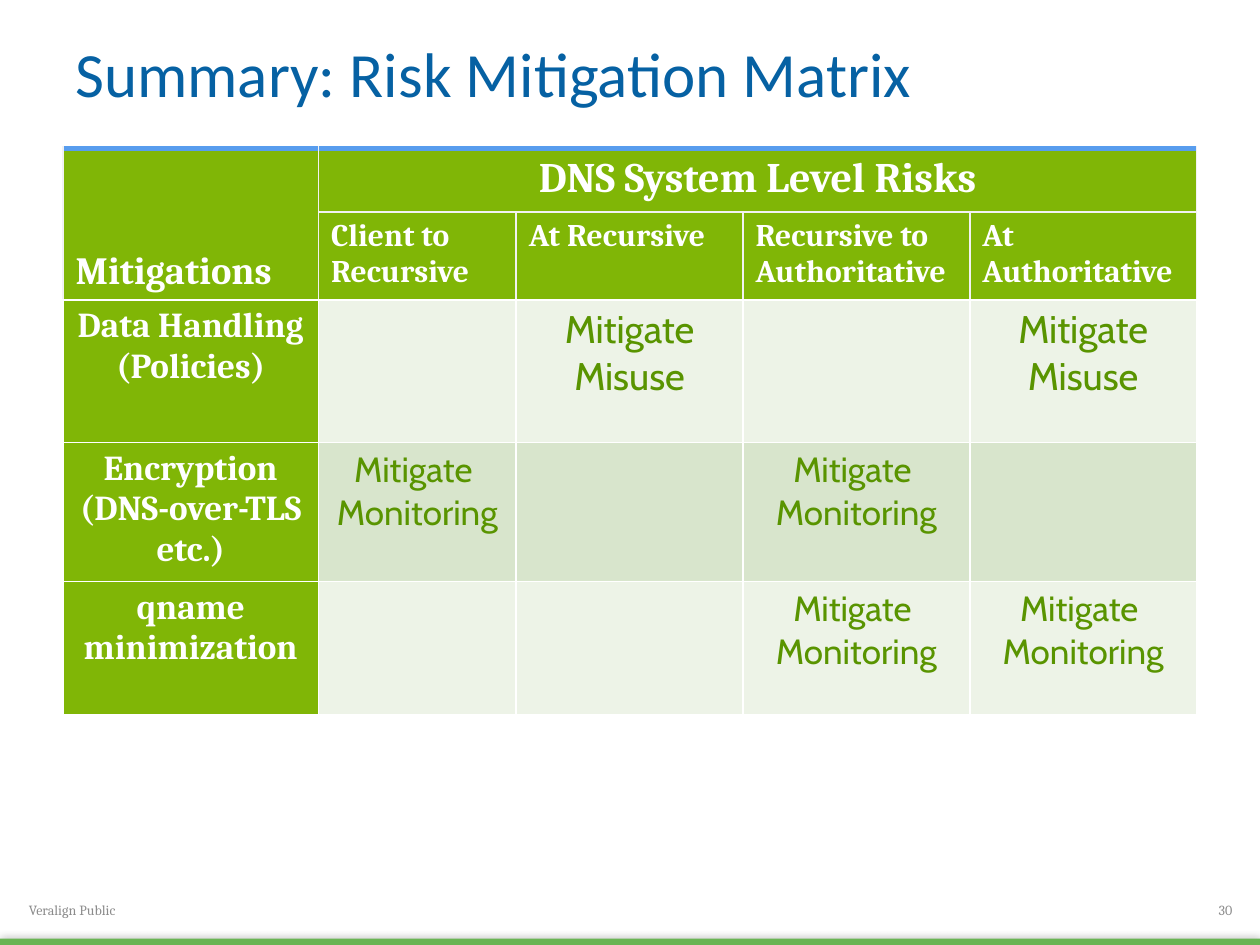
from lxml.etree import SubElement
from pptx import Presentation
from pptx.dml.color import RGBColor
from pptx.enum.shapes import MSO_SHAPE
from pptx.enum.text import MSO_ANCHOR as ANCHOR, PP_ALIGN as ALIGN
from pptx.oxml.ns import qn
from pptx.util import Pt

GREEN, WHITE, PALE_GREY, BLUE = "80B606", "FFFFFF", "F2F2F2", "589DEE"
MITIGATION_TEXT, GREY = "599400", "8C8C8C"
BAND_FILLS = ("EDF3E7", "D8E5CC")

COLUMN_WIDTHS = (146, 113, 129.6, 129.6, 129.6)
ROW_HEIGHTS = (35, 49, 81.5, 76.5, 76.5)
RISKS = ("Client to Recursive", "At Recursive",
         "Recursive to Authoritative", "At Authoritative")
MISUSE = ("Mitigate Misuse",)
MONITORING = ("Mitigate ", "Monitoring")
MITIGATIONS = (
    ("Data Handling (Policies)", 22, (None, MISUSE, None, MISUSE)),
    ("Encryption (DNS-over-TLS etc.)", 20, (MONITORING, None, MONITORING, None)),
    ("qname minimization", 20, (None, None, MONITORING, MONITORING)),
)


def rgb(color):
    return RGBColor.from_string(color)


def write(frame, lines, size, font, color, bold=False, align=ALIGN.LEFT):
    """Write each line as its own paragraph."""
    for index, line in enumerate(lines):
        paragraph = frame.add_paragraph() if index else frame.paragraphs[0]
        paragraph.alignment = align
        run = paragraph.add_run()
        run.text = line
        run.font.size = Pt(size)
        run.font.name = font
        run.font.bold = bold
        run.font.color.rgb = rgb(color)


def add_label(slide, box, text, size, font, color, align=ALIGN.LEFT):
    frame = slide.shapes.add_textbox(*map(Pt, box)).text_frame
    frame.word_wrap = True
    frame.margin_top = frame.margin_bottom = 0
    frame.vertical_anchor = ANCHOR.MIDDLE
    write(frame, [text], size, font, color, align=align)


def style_cell(cell, fill, border, top=None):
    """Give a cell its fill and borders; top marks the table's upper edge."""
    properties = cell._tc.get_or_add_tcPr()
    for side in "LRTB":
        heavy = side == "T" and top
        line = SubElement(properties, qn(f"a:ln{side}"), w=str(Pt(3 if heavy else 1)))
        line_fill = SubElement(line, qn("a:solidFill"))
        SubElement(line_fill, qn("a:srgbClr"), val=top if heavy else border)
    cell.fill.solid()
    cell.fill.fore_color.rgb = rgb(fill)


def write_header(cell, text, size, align=ALIGN.LEFT):
    write(cell.text_frame, [text], size, "Cambria", WHITE, True, align)


def add_risk_matrix(slide, left, top):
    table = slide.shapes.add_table(
        len(ROW_HEIGHTS), len(COLUMN_WIDTHS), Pt(left), Pt(top),
        Pt(sum(COLUMN_WIDTHS)), Pt(sum(ROW_HEIGHTS))).table
    table.first_row = table.horz_banding = False
    for column, width in zip(table.columns, COLUMN_WIDTHS):
        column.width = Pt(width)
    for row, height in zip(table.rows, ROW_HEIGHTS):
        row.height = Pt(height)

    for row_index, row in enumerate(table.rows):
        for column_index, cell in enumerate(row.cells):
            is_header = row_index < 2 or column_index == 0
            fill = GREEN if is_header else BAND_FILLS[row_index % 2]
            style_cell(cell, fill, PALE_GREY if row_index < 2 else WHITE,
                       top=None if row_index else BLUE)

    corner, heading = table.cell(0, 0), table.cell(0, 1)
    corner.merge(table.cell(1, 0))
    corner.vertical_anchor = ANCHOR.BOTTOM
    write_header(corner, "Mitigations", 22)
    heading.merge(table.cell(0, 4))
    write_header(heading, "DNS System Level Risks", 24, ALIGN.CENTER)
    for column_index, risk in enumerate(RISKS, 1):
        write_header(table.cell(1, column_index), risk, 18)

    for row_index, (name, size, effects) in enumerate(MITIGATIONS, 2):
        write_header(table.cell(row_index, 0), name, 20, ALIGN.CENTER)
        for column_index, lines in enumerate(effects, 1):
            if lines:
                write(table.cell(row_index, column_index).text_frame, lines, size,
                      "Cabin", MITIGATION_TEXT, align=ALIGN.CENTER)


def add_footer_bar(slide, box):
    bar = slide.shapes.add_shape(MSO_SHAPE.RECTANGLE, *map(Pt, box))
    bar.fill.solid()
    bar.fill.fore_color.rgb = rgb("69B453")
    bar.line.fill.background()
    bar.shadow.inherit = False
    effects = bar._element.spPr.find(qn("a:effectLst"))
    shadow = SubElement(effects, qn("a:outerShdw"), blurRad=str(Pt(5)), dist="0")
    shadow_color = SubElement(shadow, qn("a:srgbClr"), val="000000")
    SubElement(shadow_color, qn("a:alpha"), val="40000")


def add_footer(slide, left, top, width):
    add_footer_bar(slide, (left, top + 23.4, width, 3.6))
    add_label(slide, (left + 9.4, top, 239, 14.4), "Veralign Public", 8, "Cambria", GREY)
    add_label(slide, (left + width - 36.7, top + 1, 28, 12.4), "30", 8, "Cambria",
              GREY, ALIGN.RIGHT)


def main():
    presentation = Presentation()
    presentation.slide_width, presentation.slide_height = Pt(720), Pt(540)
    slide = presentation.slides.add_slide(presentation.slide_layouts[6])
    add_footer(slide, 0, 513, 720)
    add_label(slide, (36, 19.4, 648, 44), "Summary: Risk Mitigation Matrix", 36,
              "Calibri", "0661A3")
    add_risk_matrix(slide, 36, 85)
    presentation.save("out.pptx")


if __name__ == "__main__":
    main()
